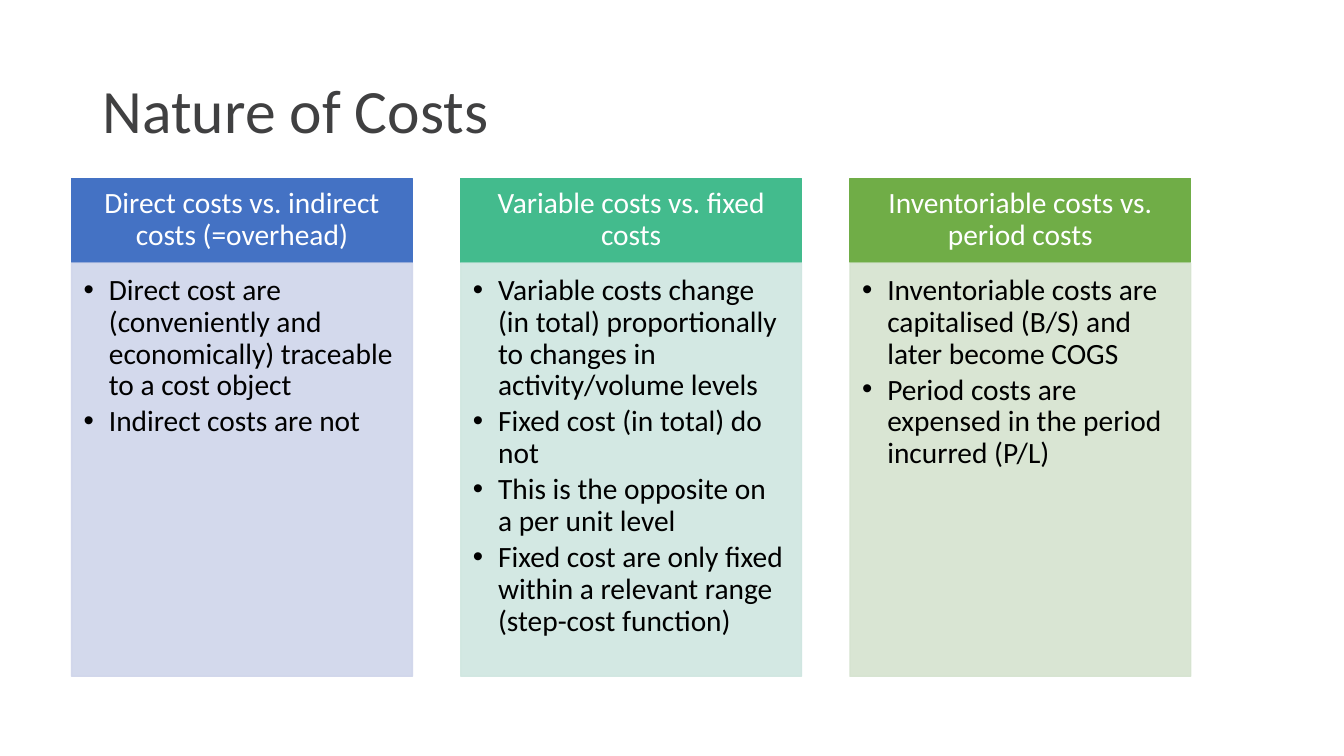
import pptx
import pptx.dml.color
import pptx.enum.shapes
import pptx.enum.text
import pptx.oxml.ns
import pptx.util
from lxml import etree

Inches = pptx.util.Inches
Pt = pptx.util.Pt
RGBColor = pptx.dml.color.RGBColor
ALIGN = pptx.enum.text.PP_ALIGN
ANCHOR = pptx.enum.text.MSO_ANCHOR
qn = pptx.oxml.ns.qn

WHITE = RGBColor(0xFF, 0xFF, 0xFF)
BLACK = RGBColor(0x00, 0x00, 0x00)
CHARCOAL = RGBColor(0x40, 0x40, 0x41)
BLUE = RGBColor(0x44, 0x72, 0xC4)
PALE_BLUE = RGBColor(0xCF, 0xD5, 0xEA)
TEAL = RGBColor(0x43, 0xBB, 0x8D)
PALE_TEAL = RGBColor(0xCF, 0xE6, 0xE0)
GREEN = RGBColor(0x70, 0xAD, 0x47)
PALE_GREEN = RGBColor(0xD5, 0xE3, 0xCF)

COLUMN_LEFT, COLUMN_STEP, COLUMN_WIDTH = 0.71, 3.86, 3.38
HEADING_TOP, HEADING_HEIGHT = 1.77, 0.83
DETAILS_TOP, DETAILS_HEIGHT = 2.61, 4.1

COST_PAIRS = [
    ("Direct costs vs. indirect costs (=overhead)", BLUE, PALE_BLUE, [
        "Direct cost are (conveniently and economically) traceable to a cost object",
        "Indirect costs are not",
    ]),
    ("Variable costs vs. fixed costs", TEAL, PALE_TEAL, [
        "Variable costs change (in total) proportionally to changes in activity/volume levels",
        "Fixed cost (in total) do not",
        "This is the opposite on a per unit level",
        "Fixed cost are only fixed within a relevant range (step-cost function)",
    ]),
    ("Inventoriable costs vs. period costs", GREEN, PALE_GREEN, [
        "Inventoriable costs are capitalised (B/S) and later become COGS",
        "Period costs are expensed in the period incurred (P/L)",
    ]),
]


def add_bullet(paragraph):
    paragraph.level = 1
    properties = paragraph._p.get_or_add_pPr()
    properties.set("marL", str(Inches(0.25)))
    properties.set("indent", str(Inches(-0.25)))
    etree.SubElement(properties, qn("a:buFont"), typeface="Arial")
    etree.SubElement(properties, qn("a:buChar"), char="•")


def write_text(shape, lines, size=21, color=BLACK, align=ALIGN.LEFT, anchor=ANCHOR.TOP,
               insets=(0.1, 0.05, 0.1, 0.05), space_after=0, bulleted=False):
    frame = shape.text_frame
    frame.word_wrap = True
    frame.vertical_anchor = anchor
    frame.margin_left, frame.margin_top, frame.margin_right, frame.margin_bottom = map(Inches, insets)
    for index, line in enumerate(lines):
        paragraph = frame.paragraphs[0] if index == 0 else frame.add_paragraph()
        if bulleted:
            add_bullet(paragraph)
        paragraph.alignment = align
        paragraph.line_spacing = 0.9
        paragraph.space_after = Pt(space_after)
        run = paragraph.add_run()
        run.text = line
        run.font.name = "Calibri"
        run.font.size = Pt(size)
        run.font.color.rgb = color


def add_panel(slide, left, top, height, color, opacity=100):
    panel = slide.shapes.add_shape(pptx.enum.shapes.MSO_SHAPE.RECTANGLE, Inches(left), Inches(top),
                                   Inches(COLUMN_WIDTH), Inches(height))
    panel.shadow.inherit = False
    panel.line.width = Pt(1)
    for fill in (panel.fill, panel.line.fill):
        fill.solid()
        fill.fore_color.rgb = color
    if opacity < 100:
        for tint in panel._element.spPr.iter(qn("a:srgbClr")):
            etree.SubElement(tint, qn("a:alpha"), val=str(opacity * 1000))
    return panel


def add_title(slide, text):
    title = slide.shapes.add_textbox(Inches(0.92), Inches(0.4), Inches(11.5), Inches(1.45))
    write_text(title, [text], size=44, color=CHARCOAL, anchor=ANCHOR.MIDDLE)


def add_cost_column(slide, left, heading_text, color, pale_color, details_lines):
    heading = add_panel(slide, left, HEADING_TOP, HEADING_HEIGHT, color)
    write_text(heading, [heading_text], color=WHITE, align=ALIGN.CENTER, anchor=ANCHOR.MIDDLE,
               insets=(0.16, 0.09, 0.16, 0.09))
    details = add_panel(slide, left, DETAILS_TOP, DETAILS_HEIGHT, pale_color, opacity=90)
    write_text(details, details_lines, insets=(0.12, 0.12, 0.16, 0.18), space_after=3.15, bulleted=True)


def main():
    presentation = pptx.Presentation()
    presentation.slide_width = Inches(13.33)
    presentation.slide_height = Inches(7.5)
    slide = presentation.slides.add_slide(presentation.slide_layouts[6])
    add_title(slide, "Nature of Costs")
    for index, cost_pair in enumerate(COST_PAIRS):
        add_cost_column(slide, COLUMN_LEFT + index * COLUMN_STEP, *cost_pair)
    presentation.save("out.pptx")


if __name__ == "__main__":
    main()
